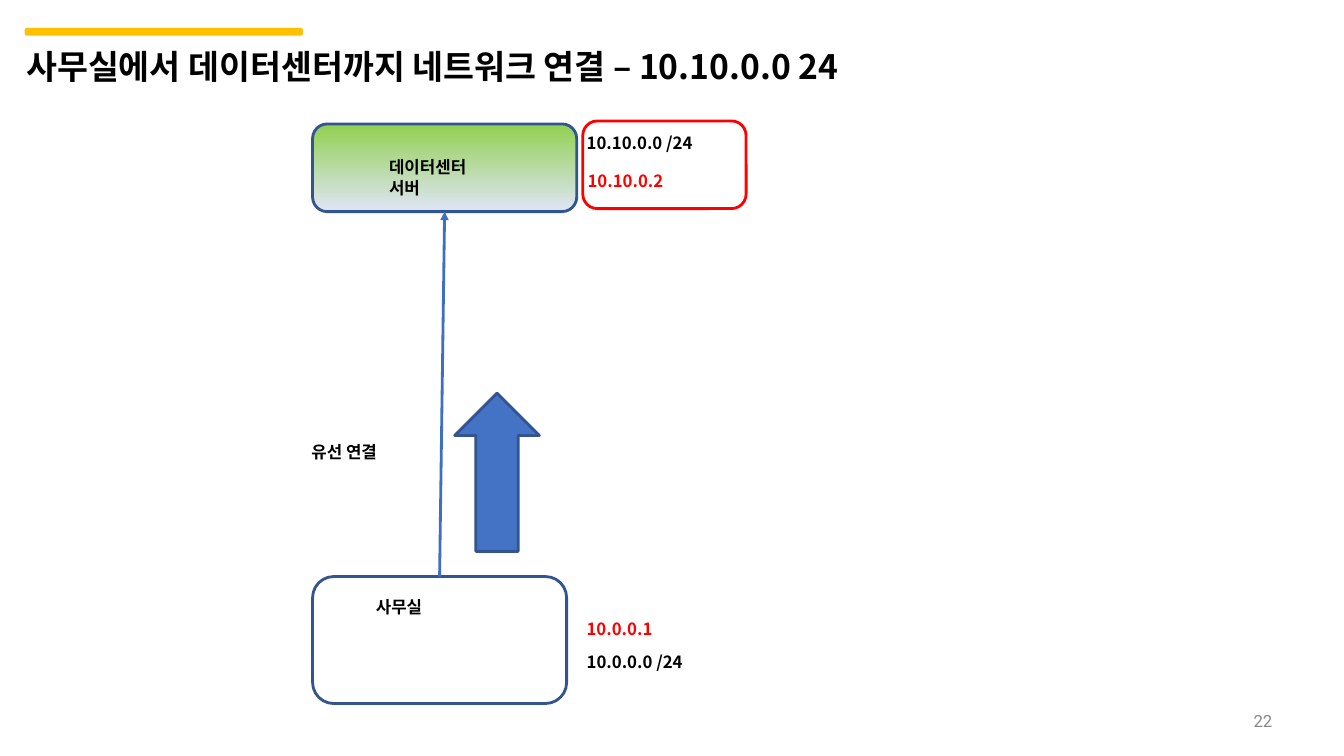
from dataclasses import dataclass

from lxml.etree import SubElement
from pptx import Presentation
from pptx.dml.color import RGBColor
from pptx.enum.shapes import MSO_CONNECTOR, MSO_SHAPE
from pptx.enum.text import MSO_ANCHOR, PP_ALIGN
from pptx.oxml.ns import qn
from pptx.util import Inches, Pt


@dataclass(frozen=True)
class Theme:
    font: str = "Noto Sans CJK KR"
    number_font: str = "Roboto"
    title_size: int = 24
    body_size: int = 12
    line_width: int = 2
    black: str = "000000"
    red: str = "FF0000"
    gray: str = "888888"
    amber: str = "FFC000"
    blue: str = "4472C4"
    link: str = "3F6FC3"
    navy: str = "325491"
    green: str = "92D050"
    mist: str = "E0E5F7"


THEME = Theme()


def color(value):
    return RGBColor.from_string(value)


def write(box, text, size=THEME.body_size, font=THEME.font, ink=THEME.black,
          bold=True, align=PP_ALIGN.LEFT, anchor=MSO_ANCHOR.TOP):
    frame = box.text_frame
    frame.word_wrap = True
    frame.vertical_anchor = anchor
    frame.margin_left = frame.margin_right = Inches(0.1)
    frame.margin_top = frame.margin_bottom = Inches(0.05)
    frame.text = text
    for para in frame.paragraphs:
        para.alignment = align
        for span in para.runs:
            span.font.name = font
            span.font.size = Pt(size)
            span.font.bold = bold
            span.font.color.rgb = color(ink)
            SubElement(span.font._element, qn("a:ea"), typeface=font)


def add_label(page, text, left, top, width, height=0.31, **style):
    box = page.shapes.add_textbox(Inches(left), Inches(top), Inches(width), Inches(height))
    write(box, text, **style)
    return box


def add_block(page, kind, left, top, width, height, line, fill=None):
    block = page.shapes.add_shape(kind, Inches(left), Inches(top), Inches(width), Inches(height))
    block.shadow.inherit = False
    block.line.color.rgb = color(line)
    block.line.width = Pt(THEME.line_width)
    if fill:
        block.fill.solid()
        block.fill.fore_color.rgb = color(fill)
    else:
        block.fill.background()
    return block


def add_header(page, left, top, width):
    add_block(page, MSO_SHAPE.ROUNDED_RECTANGLE, left + 0.1, top, 2.73, 0.05,
              THEME.amber, THEME.amber)
    title = page.shapes.title
    title.left, title.top = Inches(left), Inches(top + 0.12)
    title.width, title.height = Inches(width), Inches(0.5)
    write(title, "사무실에서 데이터센터까지 네트워크 연결 – 10.10.0.0 24",
          size=THEME.title_size, anchor=MSO_ANCHOR.MIDDLE)


def add_data_center(page, left, top, width, height):
    server = add_block(page, MSO_SHAPE.ROUNDED_RECTANGLE, left, top, width, height, THEME.navy)
    server.fill.gradient()
    server.fill.gradient_angle = 270
    for stop, shade in zip(server.fill.gradient_stops, (THEME.green, THEME.mist)):
        stop.color.rgb = color(shade)
    stops = server.fill.gradient_stops
    stops[0].position, stops[1].position = 0, 1
    add_label(page, "데이터센터\n서버", left + 0.66, top + 0.28, 1.61, 0.51)
    side = left + width
    add_label(page, "10.10.0.0 /24", side, top + 0.04, 1.68)
    add_label(page, "10.10.0.2", side + 0.01, top + 0.41, 1.47, ink=THEME.red)
    add_block(page, MSO_SHAPE.ROUNDED_RECTANGLE, side + 0.06, top - 0.03, 1.62, height, THEME.red)
    return server


def add_office(page, left, top, width, height):
    office = add_block(page, MSO_SHAPE.ROUNDED_RECTANGLE, left, top, width, height, THEME.navy)
    add_label(page, "사무실", left + 0.53, top + 0.15, 0.94)
    side = left + width + 0.1
    add_label(page, "10.0.0.1", side, top + 0.37, 1.47, ink=THEME.red)
    add_label(page, "10.0.0.0 /24", side, top + 0.7, 1.68)
    return office


def add_wired_link(page, office, server, left, top):
    link = page.shapes.add_connector(MSO_CONNECTOR.STRAIGHT, 0, 0, 0, 0)
    link.begin_connect(office, 0)
    link.end_connect(server, 2)
    link.line.color.rgb = color(THEME.link)
    link.line.width = Pt(THEME.line_width)
    SubElement(link.line._get_or_add_ln(), qn("a:tailEnd"), type="triangle")
    SubElement(link._element.spPr, qn("a:effectLst"))
    add_block(page, MSO_SHAPE.UP_ARROW, left + 1.52, top, 0.84, 1.57, THEME.navy, THEME.blue)
    add_label(page, "유선 연결", left, top + 0.43, 1.3)


def add_page_number(page, left, top, width, height):
    add_label(page, "22", left, top, width, height, font=THEME.number_font, ink=THEME.gray,
              bold=False, align=PP_ALIGN.RIGHT, anchor=MSO_ANCHOR.MIDDLE
              ).text_frame.margin_right = Inches(0.05)


def main():
    deck = Presentation()
    deck.slide_width, deck.slide_height = Inches(13.33), Inches(7.5)
    page = deck.slides.add_slide(deck.slide_layouts[5])
    add_header(page, 0.16, 0.29, 13.17)
    server = add_data_center(page, 3.1, 1.23, 2.62, 0.87)
    office = add_office(page, 3.1, 5.72, 2.52, 1.26)
    add_wired_link(page, office, server, 2.99, 3.9)
    add_page_number(page, 9.56, 6.95, 3.11, 0.4)
    deck.save("out.pptx")


if __name__ == "__main__":
    main()
